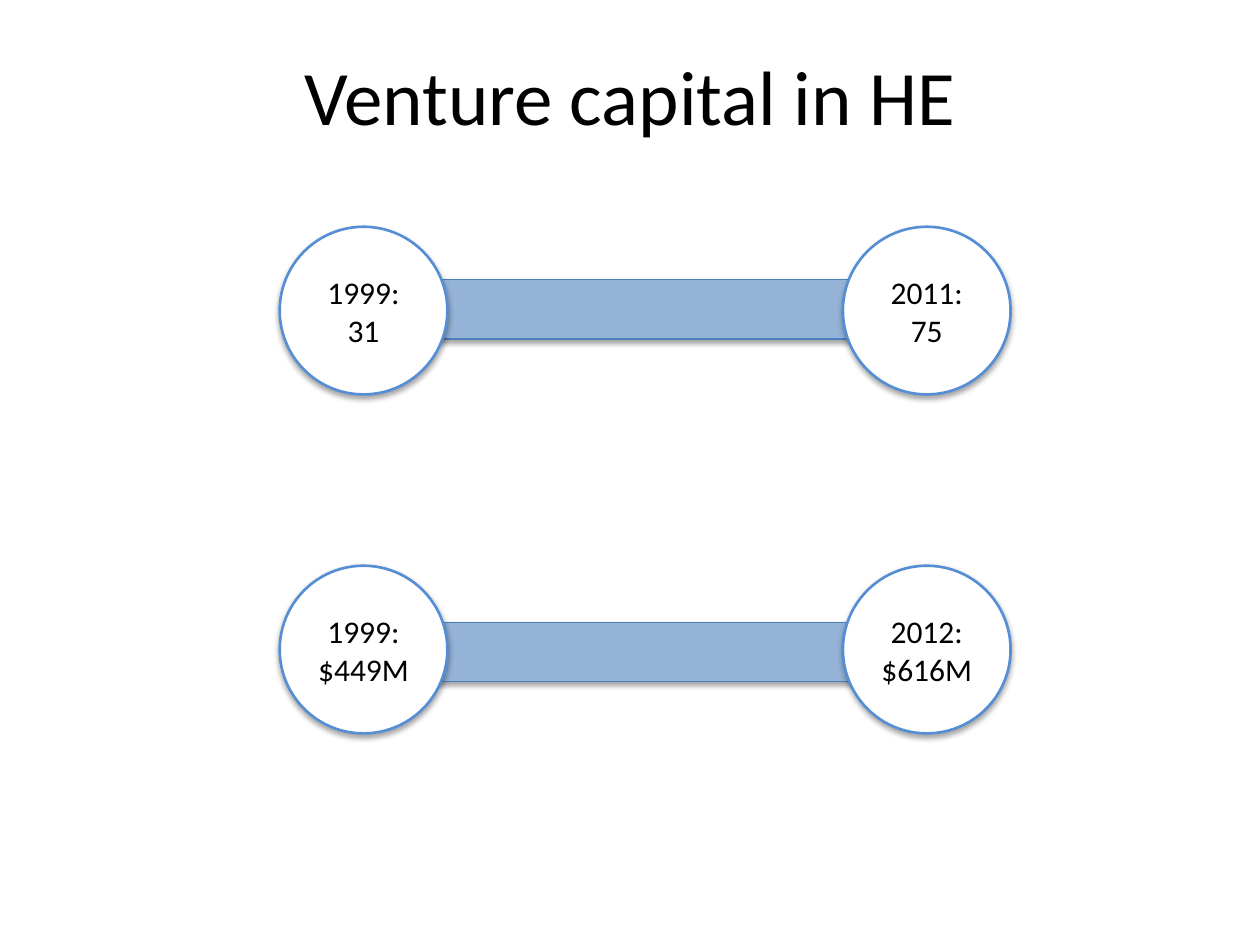
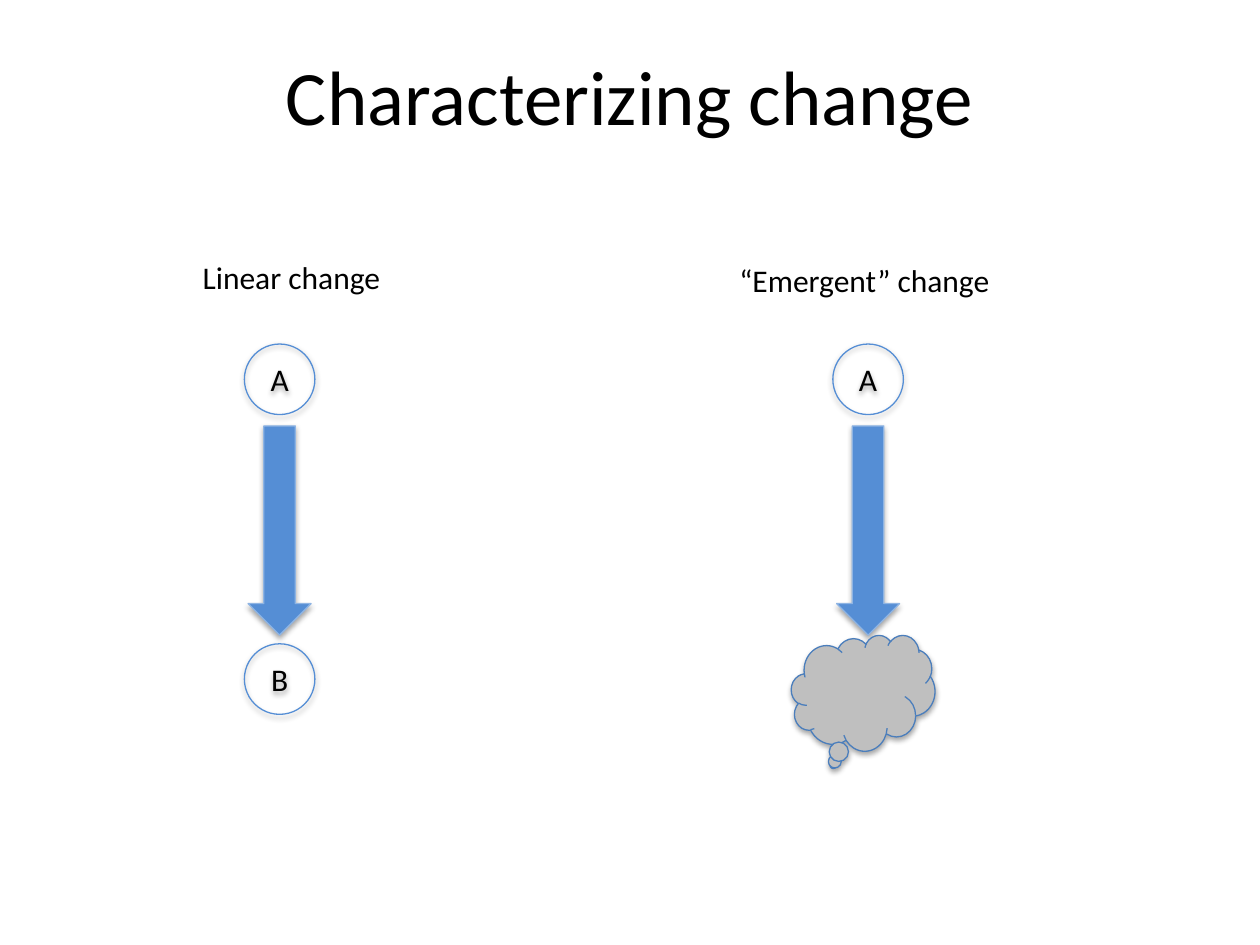
import pptx
import pptx.dml.color
import pptx.enum.shapes
import pptx.enum.text
import pptx.oxml
import pptx.oxml.ns
import pptx.util
from dataclasses import dataclass

Pt = pptx.util.Pt
SHAPE = pptx.enum.shapes.MSO_SHAPE
ALIGN = pptx.enum.text.PP_ALIGN
ANCHOR = pptx.enum.text.MSO_ANCHOR

# Shared style
FONT = "Calibri"
BLACK, WHITE, GREY = "000000", "FFFFFF", "BFBFBF"
BLUE, PALE_BLUE, DARK_BLUE, ARROW_EDGE = "558ED5", "95B3D7", "4B7EBC", "8EB4E3"
SHADOW_XML = (
    f'<a:effectLst {pptx.oxml.ns.nsdecls("a")}>'
    '<a:outerShdw blurRad="40000" dist="23000" dir="5400000" rotWithShape="0">'
    f'<a:srgbClr val="{BLACK}"><a:alpha val="35000"/></a:srgbClr>'
    "</a:outerShdw></a:effectLst>"
)


@dataclass
class Span:
    """Two dated values joined by a bar."""
    start: str
    end: str
    circle_top: float
    bar_top: float


@dataclass
class Change:
    """A heading above an arrow from A to an outcome."""
    heading: str
    heading_left: float
    heading_top: float
    heading_width: float
    centre: float
    outcome: str = ""


SPANS = [
    Span("1999:\n31", "2011:\n75", 129.6, 159.85),
    Span("1999:\n$449M", "2012:\n$616M", 323.3, 355.7),
]
CHANGES = [
    Change("Linear change", 108.7, 144, 117.4, 159.8, outcome="B"),
    Change("“Emergent” change", 415.4, 145.4, 159.1, 496.1),
]


def rgb(value: str) -> pptx.dml.color.RGBColor:
    return pptx.dml.color.RGBColor.from_string(value)


def set_text(sp, text: str, *, size: float = 18, color: str = BLACK,
             align=ALIGN.CENTER, anchor=ANCHOR.MIDDLE, wrap: bool = True) -> None:
    tf = sp.text_frame
    tf.word_wrap = wrap
    tf.vertical_anchor = anchor
    tf.text = text
    for p in tf.paragraphs:
        p.alignment = align
        for r in p.runs:
            r.font.name = FONT
            r.font.size = Pt(size)
            r.font.color.rgb = rgb(color)


def add_shape(s, kind, left: float, top: float, width: float, height: float,
              fill: str | None, line: str, weight: float = 0.75):
    sp = s.shapes.add_shape(kind, Pt(left), Pt(top), Pt(width), Pt(height))
    if fill:
        sp.fill.solid()
        sp.fill.fore_color.rgb = rgb(fill)
    else:
        sp.fill.background()
    sp.line.color.rgb = rgb(line)
    sp.line.width = Pt(weight)
    sp._element.spPr.append(pptx.oxml.parse_xml(SHADOW_XML))
    return sp


def add_circle(s, text: str, left: float, top: float, size: float,
               fill: str | None = None, weight: float = 0.75) -> None:
    sp = add_shape(s, SHAPE.OVAL, left, top, size, size, fill, BLUE, weight)
    sp.text_frame.margin_left = sp.text_frame.margin_right = 0
    set_text(sp, text)


def add_slide(prs, title: str):
    s = prs.slides.add_slide(prs.slide_layouts[6])
    s.background.fill.solid()
    s.background.fill.fore_color.rgb = rgb(WHITE)
    sp = s.shapes.add_textbox(Pt(36), Pt(21.6), Pt(648), Pt(90))
    sp.text_frame.margin_top = Pt(6)
    set_text(sp, title, size=44, anchor=ANCHOR.TOP)
    return s


def draw_span(s, span: Span) -> None:
    add_shape(s, SHAPE.RECTANGLE, 244.8, span.bar_top, 248.4, 33.85, PALE_BLUE, DARK_BLUE)
    for text, left in ((span.start, 159.85), (span.end, 481.7)):
        add_circle(s, text, left, span.circle_top, 95.8, WHITE, 1.5)


def draw_change(s, change: Change) -> None:
    sp = s.shapes.add_textbox(Pt(change.heading_left), Pt(change.heading_top),
                              Pt(change.heading_width), Pt(29))
    set_text(sp, change.heading, align=ALIGN.LEFT, anchor=ANCHOR.TOP, wrap=False)
    sp.text_frame.auto_size = pptx.enum.text.MSO_AUTO_SIZE.SHAPE_TO_FIT_TEXT

    circle, arrow = 40.3, 36
    circle_left = change.centre - circle / 2
    add_circle(s, "A", circle_left, 196.6, circle)
    if change.outcome:
        add_circle(s, change.outcome, circle_left, 367.9, circle)
    add_shape(s, SHAPE.DOWN_ARROW, change.centre - arrow / 2, 243.4, arrow, 119.5,
              BLUE, ARROW_EDGE)
    # An unknown outcome is a cloud
    if not change.outcome:
        add_shape(s, SHAPE.CLOUD_CALLOUT, 452.2, 362.9, 82.1, 66.2, GREY, DARK_BLUE)


def main() -> None:
    prs = pptx.Presentation()
    prs.slide_width, prs.slide_height = Pt(720), Pt(540)

    # Venture capital growth
    s = add_slide(prs, "Venture capital in HE")
    for span in SPANS:
        draw_span(s, span)

    # Linear and emergent change
    s = add_slide(prs, "Characterizing change")
    for change in CHANGES:
        draw_change(s, change)

    prs.save("out.pptx")


if __name__ == "__main__":
    main()
